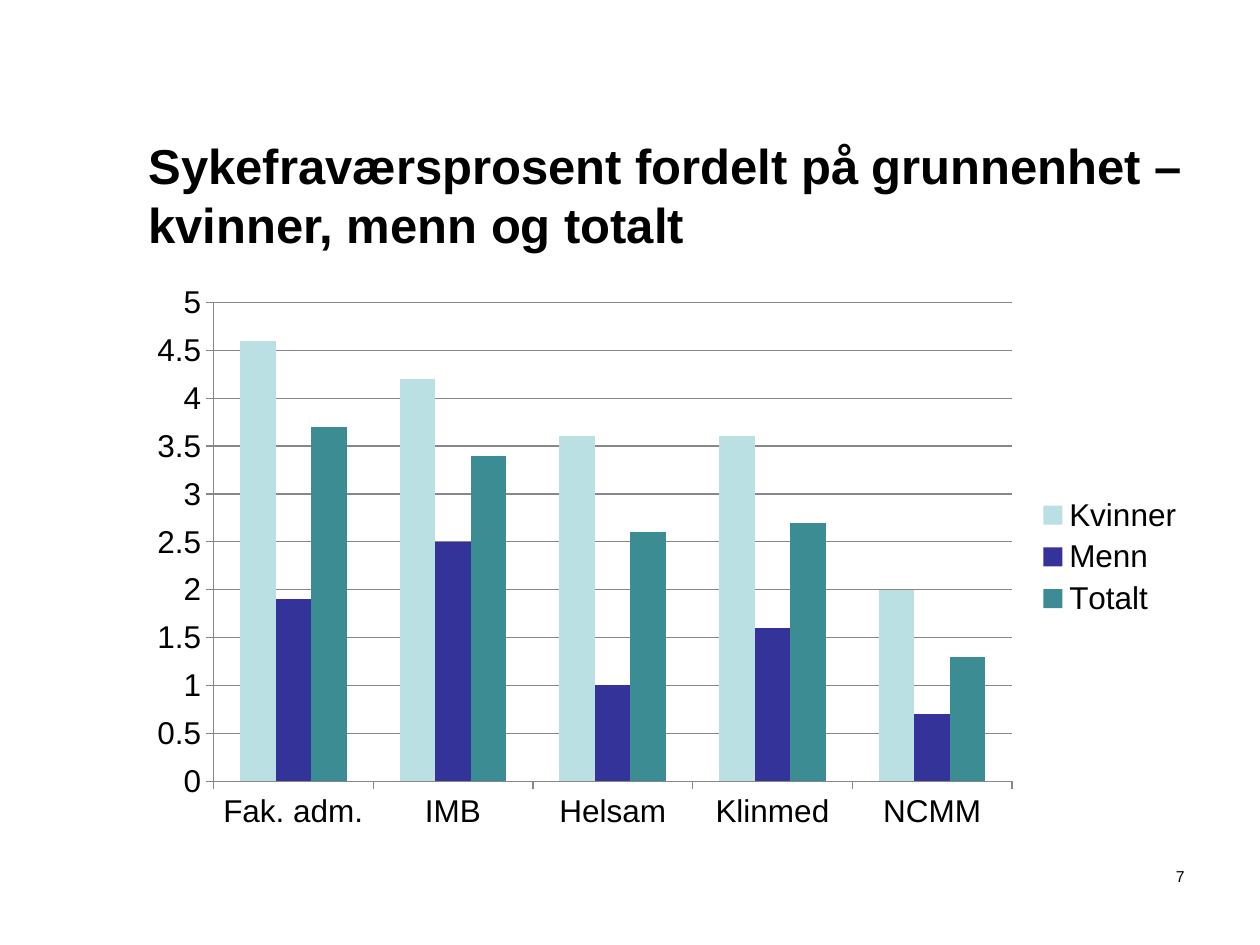
"""Build a slide with a column chart of sick leave by unit and gender."""
from pptx import Presentation
from pptx.chart.data import CategoryChartData
from pptx.dml.color import RGBColor
from pptx.enum.chart import XL_CHART_TYPE as CHART, XL_LEGEND_POSITION as LEGEND
from pptx.enum.chart import XL_TICK_MARK as TICK
from pptx.enum.text import MSO_ANCHOR as ANCHOR, PP_ALIGN as ALIGN
from pptx.util import Inches, Pt

FONT = "Arial"
COLORS = {
    "text": "000000",
    "axis": "878787",
    "Kvinner": "BBE0E3",
    "Menn": "333399",
    "Totalt": "3C8C93",
}
UNITS = ["Fak. adm.", "IMB", "Helsam", "Klinmed", "NCMM"]
SICK_LEAVE = {
    "Kvinner": [4.6, 4.2, 3.6, 3.6, 2],
    "Menn": [1.9, 2.5, 1, 1.6, 0.7],
    "Totalt": [3.7, 3.4, 2.6, 2.7, 1.3],
}


def rgb(name):
    return RGBColor.from_string(COLORS[name])


def style_font(font, size, bold=False):
    font.name = FONT
    font.size = Pt(size)
    font.bold = bold
    font.color.rgb = rgb("text")


def style_line(line):
    line.color.rgb = rgb("axis")
    line.width = Pt(0.75)


def add_text(slide, box, text, size, bold=False, align=ALIGN.LEFT, anchor=ANCHOR.TOP):
    tf = slide.shapes.add_textbox(*map(Inches, box)).text_frame
    tf.word_wrap = True
    tf.vertical_anchor = anchor
    p = tf.paragraphs[0]
    p.text = text
    p.alignment = align
    style_font(p.runs[0].font, size, bold)


def add_column_chart(slide, box):
    data = CategoryChartData()
    data.categories = UNITS
    for name, values in SICK_LEAVE.items():
        data.add_series(name, values)
    chart = slide.shapes.add_chart(CHART.COLUMN_CLUSTERED, *map(Inches, box), data).chart
    style_font(chart.font, 18)
    chart.has_title = False
    chart.has_legend = True
    chart.legend.position = LEGEND.RIGHT
    chart.legend.include_in_layout = False

    plot = chart.plots[0]
    plot.gap_width = 150
    plot.overlap = 0
    plot.vary_by_categories = False
    for series in plot.series:
        series.format.fill.solid()
        series.format.fill.fore_color.rgb = rgb(series.name)

    for axis in (chart.category_axis, chart.value_axis):
        axis.major_tick_mark = TICK.OUTSIDE
        axis.minor_tick_mark = TICK.NONE
        style_line(axis.format.line)
    value_axis = chart.value_axis
    value_axis.minimum_scale = 0
    value_axis.maximum_scale = 5
    value_axis.major_unit = 0.5
    value_axis.has_major_gridlines = True
    style_line(value_axis.major_gridlines.format.line)


def main():
    prs = Presentation()
    prs.slide_width, prs.slide_height = Inches(10), Inches(7.5)
    slide = prs.slides.add_slide(prs.slide_layouts[6])
    add_text(slide, (1.08, 0.92, 8.42, 1.25),
             "Sykefraværsprosent fordelt på grunnenhet – kvinner, menn og totalt",
             28, bold=True, anchor=ANCHOR.MIDDLE)
    add_column_chart(slide, (1.08, 2.17, 8.42, 4.5))
    add_text(slide, (8.75, 6.83, 0.75, 0.5), "7", 9, align=ALIGN.RIGHT)
    prs.save("out.pptx")


if __name__ == "__main__":
    main()
